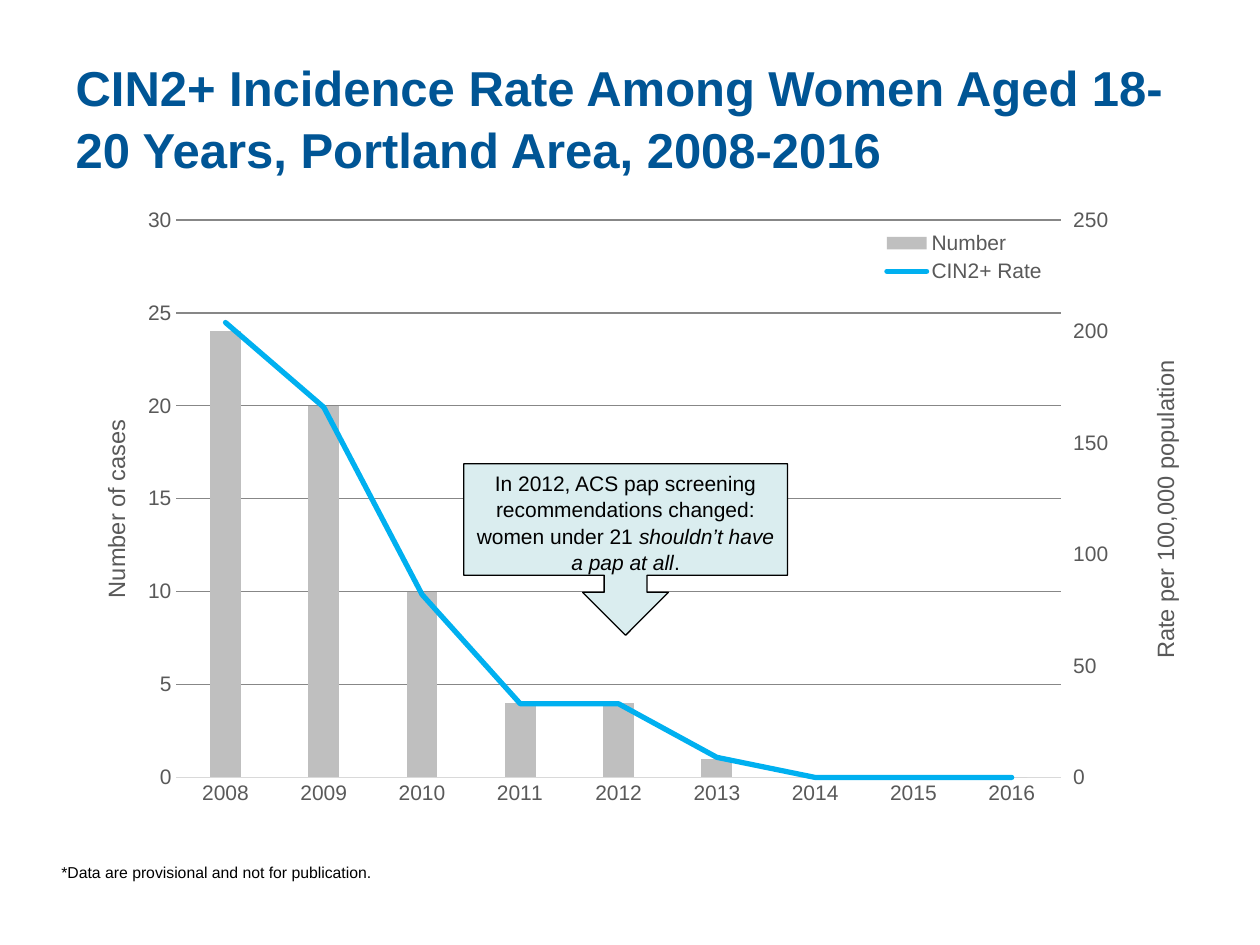
from copy import deepcopy
from pptx import Presentation
from pptx.util import Pt
from pptx.dml.color import RGBColor as RGB
from pptx.chart.axis import CategoryAxis as CatAxis, ValueAxis as ValAxis
from pptx.chart.data import CategoryChartData as ChartData
from pptx.enum.chart import (XL_CHART_TYPE as Kind, XL_LEGEND_POSITION as Spot,
                             XL_MARKER_STYLE as Mark, XL_TICK_MARK as Tick)
from pptx.enum.shapes import MSO_SHAPE as Shape
from pptx.enum.text import MSO_ANCHOR as Anchor, PP_ALIGN as Align
from pptx.oxml import parse_xml
from pptx.oxml.ns import nsdecls, qn

HUES = {"title": "005595", "text": "000000", "axis": "595959", "grid": "D9D9D9",
        "bar": "BFBFBF", "rate": "00B0F0", "note": "DAEDEF"}
HUES = {name: RGB.from_string(hue) for name, hue in HUES.items()}


def style(font, size, hue, bold=False, italic=False):
    font.name = "Arial"
    font.size = Pt(size)
    font.bold = bold
    font.italic = italic
    font.color.rgb = HUES[hue]


def place(host, index, inner=False, **sides):
    for old in host.findall(qn("c:layout")):
        host.remove(old)
    parts = '<c:layoutTarget val="inner"/>' if inner else ""
    parts += '<c:xMode val="edge"/><c:yMode val="edge"/>'
    parts += "".join(f'<c:{side} val="{val}"/>' for side, val in sides.items())
    host.insert(index, parse_xml(
        f'<c:layout {nsdecls("c")}><c:manualLayout>{parts}</c:manualLayout></c:layout>'))


deck = Presentation()
deck.slide_width, deck.slide_height = Pt(720), Pt(540)
slide = deck.slides.add_slide(deck.slide_layouts[5])

title = slide.shapes.title
title.left, title.top, title.width, title.height = Pt(36), Pt(21.6), Pt(648), Pt(90)
frame = title.text_frame
frame.word_wrap = True
frame.vertical_anchor = Anchor.MIDDLE
para = frame.paragraphs[0]
para.alignment = Align.LEFT
para.line_spacing = 1.05
run = para.add_run()
run.text = "CIN2+ Incidence Rate Among Women Aged 18-20 Years, Portland Area, 2008-2016"
style(run.font, 28, "title", bold=True)

data = ChartData()
data.categories = [str(year) for year in range(2008, 2017)]
data.add_series("Number", [24, 20, 10, 4, 4, 1, 0, 0, 0])
data.add_series("CIN2+ Rate", [204, 166, 82, 33, 33, 9, 0, 0, 0])
chart = slide.shapes.add_chart(Kind.COLUMN_CLUSTERED, Pt(36), Pt(111.6),
                               Pt(648), Pt(354), data).chart
chart.has_title = False
style(chart.font, 10, "text")

bars = chart.plots[0]
bars.gap_width = 219
bars.vary_by_categories = False
fill = bars.series[0].format.fill
fill.solid()
fill.fore_color.rgb = HUES["bar"]

area = chart.element.find(".//" + qn("c:plotArea"))
group = area.find(qn("c:barChart"))
rate = group.findall(qn("c:ser"))[1]
for flip in rate.findall(qn("c:invertIfNegative")):
    rate.remove(flip)
lines = parse_xml(f'<c:lineChart {nsdecls("c")}><c:grouping val="standard"/>'
                  '<c:varyColors val="0"/><c:marker val="1"/>'
                  '<c:axId val="501"/><c:axId val="502"/></c:lineChart>')
lines.insert(2, rate)
group.addnext(lines)
curve = chart.plots[1].series[0]
curve.smooth = False
curve.marker.style = Mark.NONE
curve.format.line.width = Pt(3)
curve.format.line.color.rgb = HUES["rate"]
rate.find(".//" + qn("a:ln")).set("cap", "rnd")

first, left = area.find(qn("c:catAx")), area.find(qn("c:valAx"))
under, right = deepcopy(first), deepcopy(left)
left.addnext(right)
right.addnext(under)
for axis, own, other in ((under, "501", "502"), (right, "502", "501")):
    axis.find(qn("c:axId")).set("val", own)
    axis.find(qn("c:crossAx")).set("val", other)
right.find(qn("c:axPos")).set("val", "r")
right.find(qn("c:crosses")).set("val", "max")
CatAxis(under).visible = False

years = chart.category_axis
years.major_tick_mark = Tick.NONE
years.format.line.color.rgb = HUES["grid"]
years.format.line.width = Pt(0.75)
style(years.tick_labels.font, 12, "axis")

for elm, label, top, step, tick, form, x, y in (
        (left, "Number of cases", 30, 5, Tick.NONE, "General", 0.03, 0.355),
        (right, "Rate per 100,000 population", 250, 50, Tick.OUTSIDE, "0", 0.955, 0.26)):
    axis = ValAxis(elm)
    axis.minimum_scale, axis.maximum_scale, axis.major_unit = 0, top, step
    axis.major_tick_mark = tick
    axis.format.line.fill.background()
    axis.has_major_gridlines = elm is left
    axis.tick_labels.number_format = form
    axis.tick_labels.number_format_is_linked = False
    style(axis.tick_labels.font, 12, "axis")
    frame = axis.axis_title.text_frame
    run = frame.paragraphs[0].add_run()
    run.text = label
    style(run.font, 13.5, "axis")
    head = elm.find(qn("c:title"))
    turn = head.find(".//" + qn("a:bodyPr"))
    turn.set("rot", "-5400000")
    turn.set("vert", "horz")
    place(head, 1, x=x, y=y)

grid = chart.value_axis.major_gridlines.format.line
grid.color.rgb = HUES["grid"]
grid.width = Pt(0.75)
place(area, 0, inner=True, x=0.1, y=0.04, w=0.78, h=0.9)

chart.has_legend = True
legend = chart.legend
legend.position = Spot.CORNER
legend.include_in_layout = True
style(legend.font, 12, "axis")
place(chart.element.find(".//" + qn("c:legend")), 1, x=0.72, y=0.05, w=0.15, h=0.1)

note = slide.shapes.add_shape(Shape.DOWN_ARROW_CALLOUT, Pt(265), Pt(265), Pt(185), Pt(98))
note.shadow.inherit = False
note.fill.solid()
note.fill.fore_color.rgb = HUES["note"]
note.line.color.rgb = HUES["text"]
note.line.width = Pt(0.75)
frame = note.text_frame
frame.word_wrap = True
frame.vertical_anchor = Anchor.TOP
frame.margin_left = frame.margin_right = Pt(5)
frame.margin_top = frame.margin_bottom = Pt(3)
para = frame.paragraphs[0]
para.alignment = Align.CENTER
para.line_spacing = 1.05
for text, slant in (
        ("In 2012, ACS pap screening recommendations changed: women under 21 ", False),
        ("shouldn’t have a pap at all", True), (".", False)):
    run = para.add_run()
    run.text = text
    style(run.font, 12, "text", italic=slant)

foot = slide.shapes.add_textbox(Pt(28), Pt(489.6), Pt(474), Pt(18))
foot.text_frame.word_wrap = True
run = foot.text_frame.paragraphs[0].add_run()
run.text = "*Data are provisional and not for publication."
style(run.font, 9, "text")

deck.save("out.pptx")
